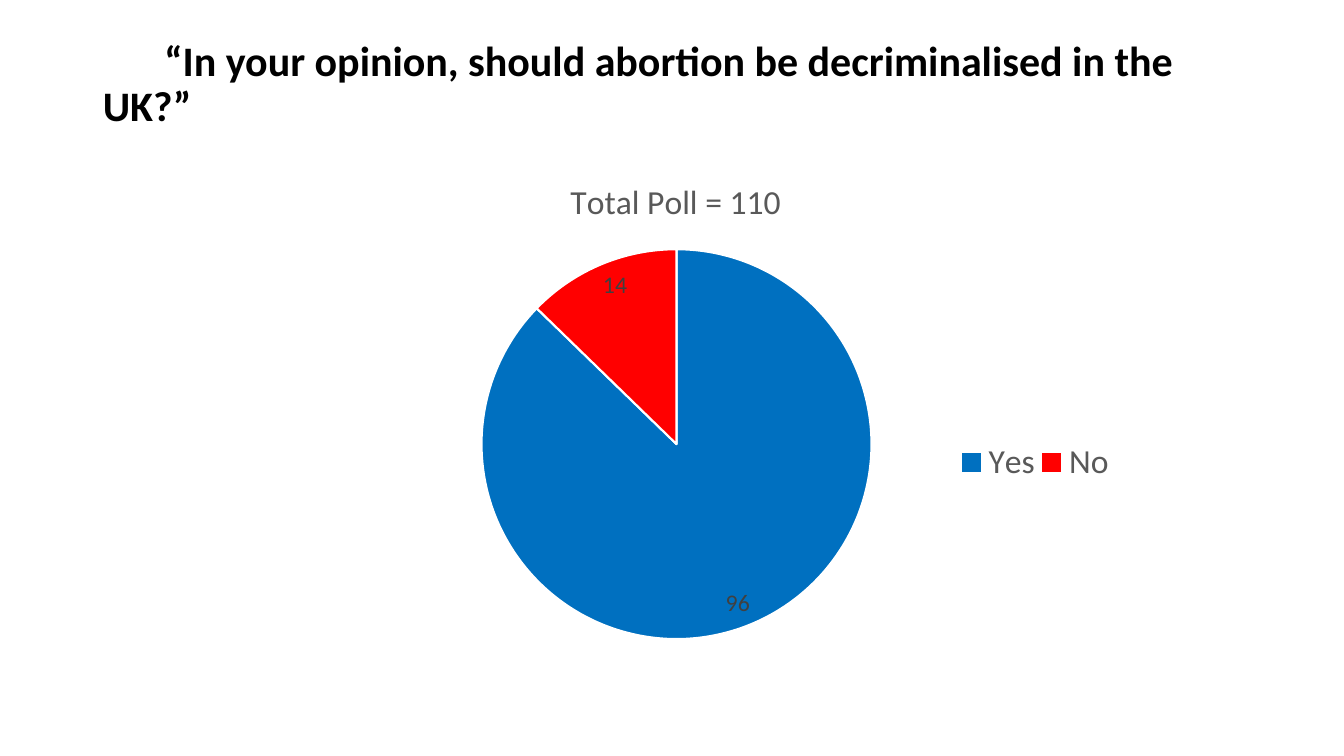
"""Build a slide with a poll question and a pie chart of the answers."""
from lxml.etree import SubElement
from pptx import Presentation
from pptx.chart.data import CategoryChartData
from pptx.dml.color import RGBColor
from pptx.enum.chart import XL_CHART_TYPE as ChartType
from pptx.enum.chart import XL_LABEL_POSITION as LabelPosition
from pptx.enum.chart import XL_LEGEND_POSITION as LegendPosition
from pptx.enum.text import MSO_ANCHOR, PP_ALIGN
from pptx.oxml import parse_xml
from pptx.oxml.ns import nsdecls, qn
from pptx.util import Inches, Pt

QUESTION = "“In your opinion, should abortion be decriminalised in the UK?”"
POLL_TITLE = "Total Poll = 110"
ANSWERS = [("Yes", 96, "0070C0"), ("No", 14, "FF0000"),
           (" ", 0, "FF0000"), (" ", 0, "FF0000")]
FONT = "Calibri"

TITLE_AREA = (0.92, 0.12, 11.5, 1.45)
CHART_AREA = (0.92, 1.57, 11.58, 5.54)
POLL_TITLE_AT = (5.6, 1.72)
PIE_AREA = (4.78, 2.47, 3.87, 3.88)
LEGEND_AREA = (9.47, 4.37, 1.6, 0.44)


def color(value):
    return RGBColor.from_string(value)


def set_format(target, values):
    for name, value in values.items():
        setattr(target, name, value)


def set_font(font, size, value, bold=False):
    set_format(font, {"name": FONT, "size": Pt(size), "bold": bold})
    font.color.rgb = color(value)


def place(element, index, area, inner=False):
    """Give a chart part a manual layout from slide positions in inches."""
    for old in element.findall(qn("c:layout")):
        element.remove(old)
    layout = parse_xml(f"<c:layout {nsdecls('c')}/>")
    manual = SubElement(layout, qn("c:manualLayout"))
    left, top, width, height = CHART_AREA
    origins, spans = (left, top, 0, 0), (width, height, width, height)
    entries = [("layoutTarget", "inner")] if inner else []
    entries += [("xMode", "edge"), ("yMode", "edge")]
    entries += [(name, f"{(value - origin) / span:.3f}")
                for name, value, origin, span in zip("xywh", area, origins, spans)]
    for name, value in entries:
        SubElement(manual, qn(f"c:{name}")).set("val", value)
    element.insert(index, layout)


def hide_entry(element, tag, position, index):
    """Hide the label or legend entry of one answer."""
    element.insert(position, parse_xml(
        f'<c:{tag} {nsdecls("c")}><c:idx val="{index}"/><c:delete val="1"/></c:{tag}>'))


def add_question(page):
    title = page.shapes.title
    set_format(title, dict(zip(("left", "top", "width", "height"),
                               map(Inches, TITLE_AREA))))
    set_format(title.text_frame, {"word_wrap": True,
                                  "vertical_anchor": MSO_ANCHOR.MIDDLE})
    para = title.text_frame.paragraphs[0]
    set_format(para, {"alignment": PP_ALIGN.LEFT, "line_spacing": 0.9})
    para._p.get_or_add_pPr().set("indent", str(Inches(0.61)))
    span = para.add_run()
    span.text = QUESTION
    set_font(span.font, 30, "000000", True)


def add_poll(page):
    data = CategoryChartData()
    data.categories = [answer for answer, _, _ in ANSWERS]
    data.add_series("Series 1", [votes for _, votes, _ in ANSWERS])
    chart = page.shapes.add_chart(ChartType.PIE, *map(Inches, CHART_AREA), data).chart
    set_font(chart.font, 10, "000000")

    chart.has_title = True
    para = chart.chart_title.text_frame.paragraphs[0]
    span = para.add_run()
    span.text = POLL_TITLE
    set_font(span.font, 24, "595959")
    place(chart.chart_title._element, 1, POLL_TITLE_AT)

    chart.has_legend = True
    legend = chart.legend
    set_format(legend, {"position": LegendPosition.BOTTOM, "include_in_layout": False})
    set_font(legend.font, 24, "595959")
    place(legend._element, 1, LEGEND_AREA)

    plot = chart.plots[0]
    plot.vary_by_categories = True
    series = plot.series[0]
    labels = series.data_labels
    set_format(labels, {"show_value": True, "show_percentage": False,
                        "position": LabelPosition.INSIDE_END})
    set_font(labels.font, 17, "404040")
    hidden = 0
    for index, (_, votes, fill) in enumerate(ANSWERS):
        piece = series.points[index].format
        piece.fill.solid()
        piece.fill.fore_color.rgb = color(fill)
        piece.line.color.rgb = color("FFFFFF")
        piece.line.width = Pt(1.5)
        if not votes:
            hide_entry(labels._element, "dLbl", hidden, index)
            hide_entry(legend._element, "legendEntry", 1 + hidden, index)
            hidden += 1
    place(chart._chartSpace.chart.plotArea, 0, PIE_AREA, inner=True)


def main():
    deck = Presentation()
    set_format(deck, {"slide_width": Inches(13.33), "slide_height": Inches(7.5)})
    page = deck.slides.add_slide(deck.slide_layouts[5])
    add_question(page)
    add_poll(page)
    deck.save("out.pptx")


if __name__ == "__main__":
    main()
